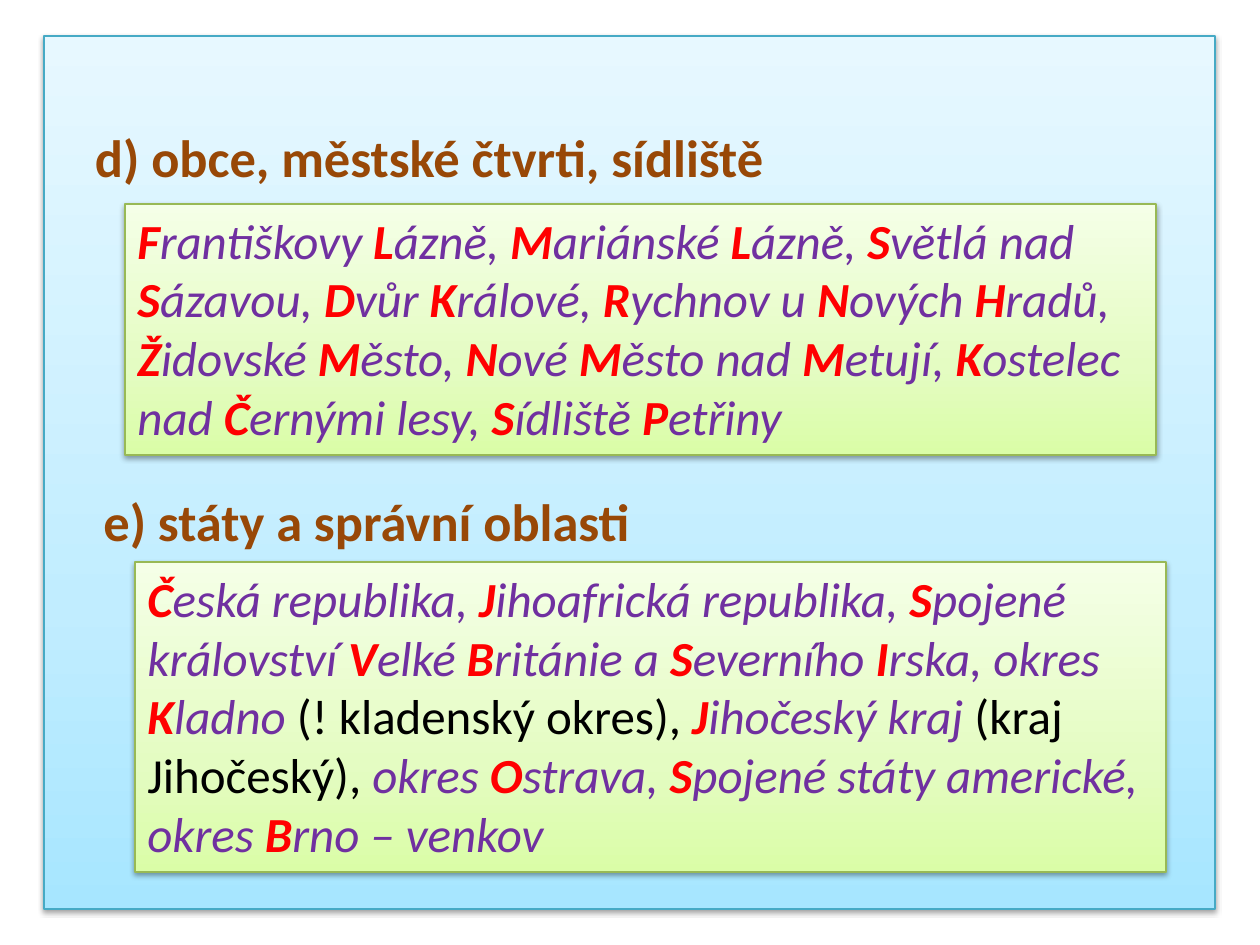
from itertools import groupby

from lxml import etree
from pptx import Presentation
from pptx.dml.color import RGBColor
from pptx.enum.shapes import MSO_SHAPE
from pptx.enum.text import MSO_ANCHOR, PP_ALIGN
from pptx.oxml.ns import qn
from pptx.util import Emu, Pt

RECT = MSO_SHAPE.RECTANGLE
TOP = MSO_ANCHOR.TOP
LEFT = PP_ALIGN.LEFT

PX = 914400 / 126
FONT = "Calibri"
COLORS = {
    "heading": "984807",
    "capital": "FF0000",
    "name": "7030A0",
    "note": "000000",
    "blue_line": "46AAC5",
    "green_line": "98B955",
    "shadow": "000000",
}
GRADIENTS = {
    "blue": [(0, "A7E6FF"), (35, "C1EDFF"), (100, "E7F8FF")],
    "green": [(0, "DAFDA7"), (35, "E4FCC2"), (100, "F5FFE7")],
}

TOWNS = (
    "Františkovy Lázně, Mariánské Lázně, Světlá nad Sázavou, Dvůr Králové, "
    "Rychnov u Nových Hradů, Židovské Město, Nové Město nad Metují, "
    "Kostelec nad Černými lesy, Sídliště Petřiny"
)
STATES = (
    "Česká republika, Jihoafrická republika, Spojené království "
    "Velké Británie a Severního Irska, okres Kladno |(! kladenský okres), |"
    "Jihočeský kraj |(kraj Jihočeský), |okres Ostrava, "
    "Spojené státy americké, okres Brno – venkov"
)


def px(value):
    return Emu(round(value * PX))


def add_color(parent, color, alpha=100):
    clr = etree.SubElement(parent, qn("a:srgbClr"), val=color)
    if alpha < 100:
        etree.SubElement(clr, qn("a:alpha"), val=str(alpha * 1000))


class SlideBuilder:
    def __init__(self, slide):
        self.slide = slide

    def panel(self, x, y, w, h, theme):
        """Add a shadowed rectangle with a vertical gradient."""
        sp = self.slide.shapes.add_shape(RECT, px(x), px(y), px(w), px(h))
        sp.fill.gradient()
        sp.fill.gradient_angle = 90
        stops = sp.element.spPr.find(".//" + qn("a:gsLst"))
        stops.clear()
        for pos, color in GRADIENTS[theme]:
            add_color(etree.SubElement(stops, qn("a:gs"), pos=str(pos * 1000)), color)
        sp.line.color.rgb = RGBColor.from_string(COLORS[theme + "_line"])
        sp.line.width = Pt(0.75)
        sp.shadow.inherit = False
        effects = sp.element.spPr.find(qn("a:effectLst"))
        shadow = etree.SubElement(
            effects, qn("a:outerShdw"), blurRad="40000", dist="20000",
            dir="5400000", rotWithShape="0")
        add_color(shadow, COLORS["shadow"], alpha=38)
        return self.prepare(sp)

    def textbox(self, x, y, w, h):
        return self.prepare(
            self.slide.shapes.add_textbox(px(x), px(y), px(w), px(h)))

    def prepare(self, sp):
        tf = sp.text_frame
        tf.word_wrap = True
        tf.vertical_anchor = TOP
        tf.paragraphs[0].alignment = LEFT
        return tf

    def run(self, tf, text, size=28, color="name", bold=False, italic=False):
        r = tf.paragraphs[0].add_run()
        r.text = text
        r.font.name = FONT
        r.font.size = Pt(size)
        r.font.bold = bold
        r.font.italic = italic
        r.font.color.rgb = RGBColor.from_string(COLORS[color])

    def heading(self, tf, text):
        self.run(tf, text, size=30, color="heading", bold=True)

    def examples(self, x, y, w, h, text):
        """Add a green panel with capitals picked out; bars enclose plain notes."""
        tf = self.panel(x, y, w, h, "green")
        for i, part in enumerate(text.split("|")):
            if i % 2:
                self.run(tf, part, color="note")
                continue
            for capital, chars in groupby(part, str.isupper):
                self.run(tf, "".join(chars), color="capital" if capital else "name",
                         bold=capital, italic=True)


def main():
    prs = Presentation()
    prs.slide_width, prs.slide_height = px(1260), px(945)
    s = SlideBuilder(prs.slides.add_slide(prs.slide_layouts[6]))

    background = s.panel(44, 36, 1171, 873, "blue")
    background.margin_left, background.margin_top = px(51), px(89)
    s.heading(background, "d) obce, městské čtvrti, sídliště")
    s.examples(125, 204, 1031, 251, TOWNS)

    s.heading(s.textbox(91, 483, 1050, 136), "e) státy a správní oblasti")
    s.examples(135, 562, 1031, 310, STATES)

    prs.save("out.pptx")


if __name__ == "__main__":
    main()
